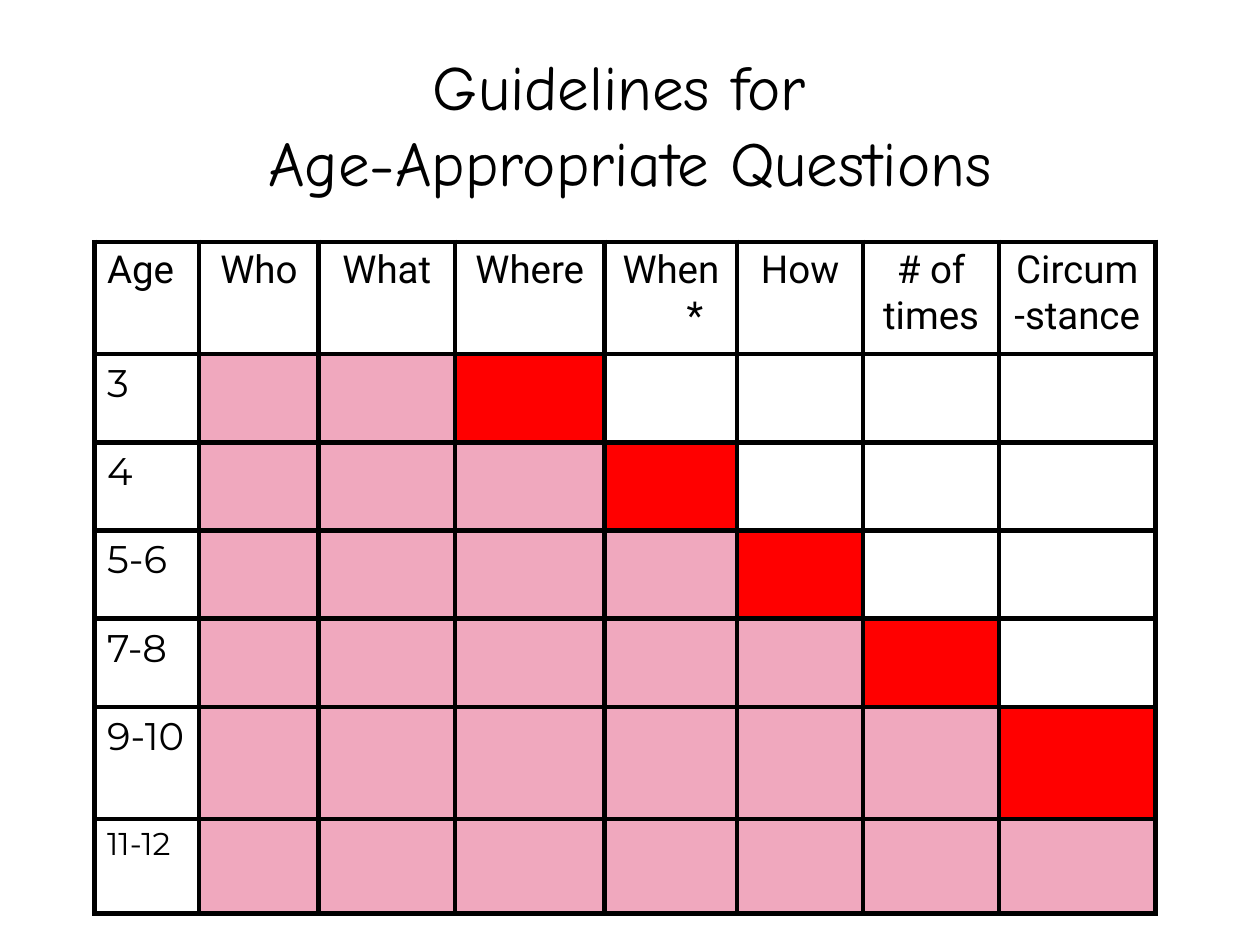
from lxml.etree import SubElement
from pptx import Presentation
from pptx.dml.color import RGBColor
from pptx.enum.text import MSO_ANCHOR as Anchor, PP_ALIGN as Align
from pptx.oxml.ns import qn
from pptx.util import Inches, Pt

BLACK, PINK, RED = "000000", "F0A8BE", "FF0000"
HEADERS = ["Age", "Who", "What", "Where", "When*", "How", "# of times", "Circum-stance"]
AGES = ["3", "4", "5-6", "7-8", "9-10", "11-12"]
COLUMN_WIDTHS = [0.83, 0.95, 1.08, 1.19, 1.05, 1, 1.08, 1.24]
ROW_HEIGHTS = [0.89, 0.7, 0.7, 0.7, 0.7, 0.89, 0.75]
FIRST_RED_COLUMN = 3


def color(value):
    return RGBColor.from_string(value)


def write(frame, text, font="Roboto", size=22, align=Align.LEFT, hanging=0):
    para = frame.paragraphs[0]
    para.alignment = align
    if hanging:
        properties = para._p.get_or_add_pPr()
        properties.set("marL", str(Inches(hanging)))
        properties.set("indent", str(-Inches(hanging)))
    for number, line in enumerate(text.split("\n")):
        if number:
            para.add_line_break()
        span = para.add_run()
        span.text = line
        span.font.name = font
        span.font.size = Pt(size)
        span.font.color.rgb = color(BLACK)


def add_title(page, text):
    box = page.shapes.add_textbox(Inches(0.5), Inches(0.33), Inches(9), Inches(1.25))
    frame = box.text_frame
    frame.word_wrap = True
    frame.vertical_anchor = Anchor.BOTTOM
    frame.margin_left = frame.margin_right = frame.margin_bottom = 0
    write(frame, text, font="Comic Neue", size=36, align=Align.CENTER)


def style_cell(cell, fill=None):
    if fill:
        cell.fill.solid()
        cell.fill.fore_color.rgb = color(fill)
    else:
        cell.fill.background()
    # Borders come before the fill in the cell properties
    properties = cell._tc.get_or_add_tcPr()
    for position, side in enumerate(("lnL", "lnR", "lnT", "lnB")):
        line = SubElement(properties, qn(f"a:{side}"), w=str(Pt(3)))
        paint = SubElement(line, qn("a:solidFill"))
        SubElement(paint, qn("a:srgbClr"), val=BLACK)
        properties.insert(position, line)


def question_fill(row, column):
    """Pink up to the diagonal, red on it, nothing beyond."""
    red_column = FIRST_RED_COLUMN + row - 1
    if row == 0 or column == 0 or column > red_column:
        return None
    return RED if column == red_column else PINK


def add_age_table(page):
    table = page.shapes.add_table(
        len(ROW_HEIGHTS), len(COLUMN_WIDTHS), Inches(0.75), Inches(1.92),
        Inches(sum(COLUMN_WIDTHS)), Inches(sum(ROW_HEIGHTS))).table
    table.first_row = table.horz_banding = False
    for column, width in zip(table.columns, COLUMN_WIDTHS):
        column.width = Inches(width)
    for row, height in zip(table.rows, ROW_HEIGHTS):
        row.height = Inches(height)

    # Borders and fills
    for row in range(len(ROW_HEIGHTS)):
        for column in range(len(COLUMN_WIDTHS)):
            style_cell(table.cell(row, column), question_fill(row, column))

    # Header row: the single-word questions have a hanging indent
    for column, text in enumerate(HEADERS):
        write(table.cell(0, column).text_frame, text,
              align=Align.CENTER if column else Align.LEFT,
              hanging=0.38 if 1 <= column <= 5 else 0)

    # Age column
    for row, age in enumerate(AGES, start=1):
        write(table.cell(row, 0).text_frame, age, font="Montserrat",
              size=18 if age == AGES[-1] else 22, hanging=0.38)


def main():
    deck = Presentation()
    deck.slide_width, deck.slide_height = Inches(10), Inches(7.5)
    page = deck.slides.add_slide(deck.slide_layouts[6])
    add_title(page, "Guidelines for \nAge-Appropriate Questions")
    add_age_table(page)
    deck.save("out.pptx")


if __name__ == "__main__":
    main()
